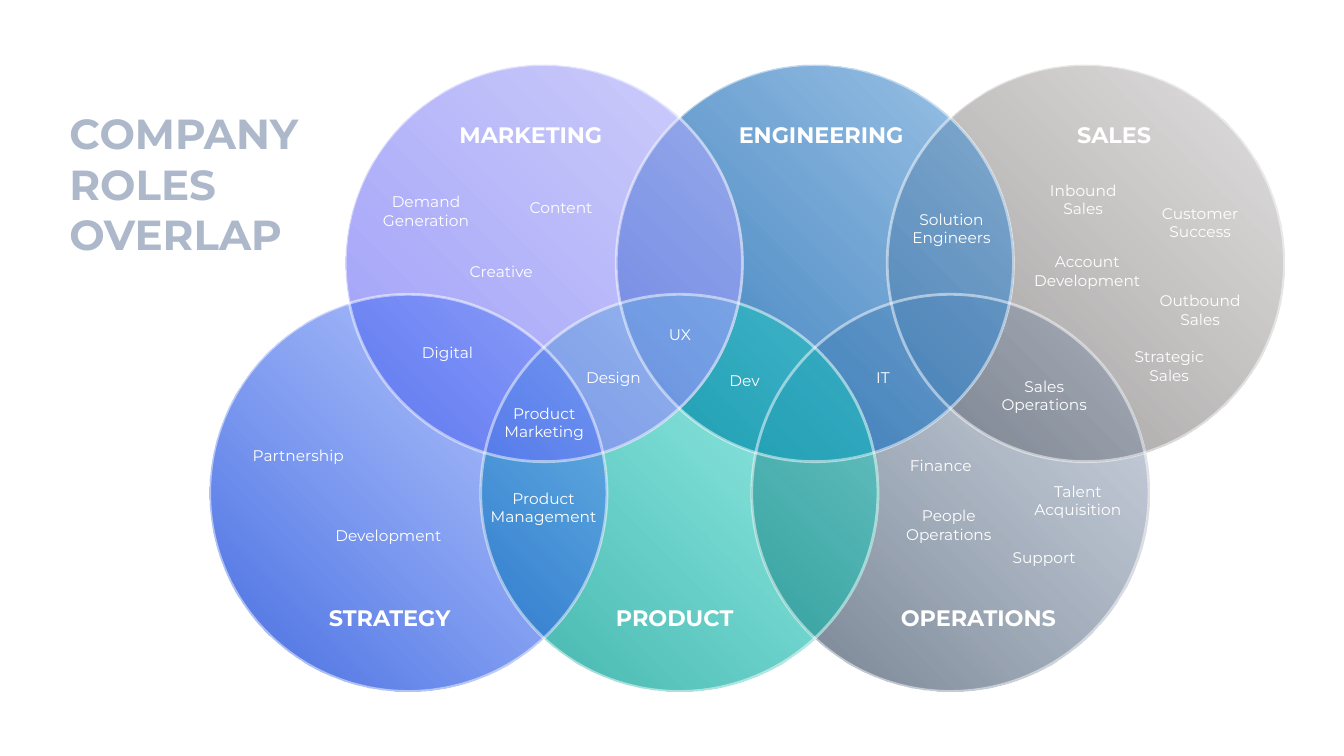
from dataclasses import dataclass
from lxml.etree import SubElement
from pptx import Presentation
from pptx.dml.color import RGBColor
from pptx.enum.shapes import MSO_SHAPE as Preset
from pptx.enum.text import MSO_ANCHOR as Anchor, MSO_AUTO_SIZE as AutoSize, PP_ALIGN as Align
from pptx.oxml import parse_xml
from pptx.oxml.ns import nsdecls, qn
from pptx.util import Inches, Pt


@dataclass(frozen=True)
class Theme:
    font: str = "Montserrat"
    white: str = "FFFFFF"
    title_color: str = "ADB9CA"
    title_size: int = 30
    heading_size: int = 16
    label_size: int = 11
    outline_width: int = 2
    outline_opacity: int = 50


THEME = Theme()
TITLE = "COMPANY ROLES OVERLAP"

# name, heading centre and width in % of slide width, (colour, opacity %) from inner to outer
DEPARTMENTS = [
    ("STRATEGY", 29.0, 10.8, ("053AD8", 75), ("567FFB", 40)),
    ("MARKETING", 39.5, 12.3, ("7A7AF7", 75), ("AFAFFA", 60)),
    ("PRODUCT", 50.2, 10.4, ("10A095", 80), ("15D5C6", 40)),
    ("ENGINEERING", 61.1, 14.0, ("2E75B6", 100), ("5B9BD5", 60)),
    ("OPERATIONS", 72.8, 13.3, ("44546A", 75), ("8497B0", 40)),
    ("SALES", 82.9, 7.1, ("767171", 75), ("AFABAB", 40)),
]

ROLES = [
    ("Demand Generation", 31.7, 24.8, 8.2),
    ("Creative", 37.3, 34.0, 8.2),
    ("Content", 41.75, 25.5, 8.2),
    ("Digital", 33.3, 44.7, 8.2),
    ("Product Marketing", 40.5, 52.8, 8.2),
    ("Design", 45.65, 48.0, 8.2),
    ("UX", 50.6, 42.3, 3.75),
    ("Dev", 55.4, 48.4, 9.45),
    ("Product Management", 40.45, 64.0, 9.45),
    ("Partnership", 22.2, 58.3, 10.8),
    ("Development", 28.9, 68.9, 10.8),
    ("IT", 65.7, 48.0, 3.3),
    ("Finance", 70.0, 59.7, 8.8),
    ("Talent Acquisition", 80.2, 63.1, 8.8),
    ("People Operations", 70.6, 66.3, 8.8),
    ("Support", 77.7, 71.9, 8.8),
    ("Solution Engineers", 70.8, 27.1, 9.45),
    ("Sales Operations", 77.7, 49.2, 9.45),
    ("Inbound Sales", 80.6, 23.3, 9.45),
    ("Customer Success", 89.3, 26.3, 9.45),
    ("Account Development", 80.9, 32.7, 9.45),
    ("Outbound Sales", 89.3, 37.9, 9.45),
    ("Strategic Sales", 87.0, 45.3, 9.45),
]

WIDTH, HEIGHT = 13.33, 7.5
DIAMETER = 3.94
FIRST_LEFT, COLUMN_STEP = 2.08, 1.344
ROW_TOPS = (2.92, 0.64)
HEADING_TOPS = (5.94, 1.15)
HEADING_HEIGHT = 0.37
LABEL_HEIGHTS = (0.29, 0.47)
TITLE_BOX = (0.59, 1.02, 2.7, 1.62)


def add_circle(slide, column):
    left = FIRST_LEFT + column * COLUMN_STEP
    box = (left, ROW_TOPS[column % 2], DIAMETER, DIAMETER)
    circle = slide.shapes.add_shape(Preset.OVAL, *map(Inches, box))
    circle.shadow.inherit = False
    return circle


def fill_radial(circle, colors):
    stops = "".join(
        f'<a:gs pos="{position}"><a:srgbClr val="{color}">'
        f'<a:alpha val="{opacity * 1000}"/></a:srgbClr></a:gs>'
        for position, (color, opacity) in zip((0, 100000), colors)
    )
    gradient = parse_xml(
        f'<a:gradFill {nsdecls("a")} rotWithShape="1"><a:gsLst>{stops}</a:gsLst>'
        '<a:path path="circle"><a:fillToRect t="100000" r="100000"/></a:path></a:gradFill>'
    )
    circle.element.spPr.find(qn("a:prstGeom")).addnext(gradient)
    circle.line.fill.background()


def outline(circle):
    circle.fill.background()
    circle.line.color.rgb = RGBColor.from_string(THEME.white)
    circle.line.width = Pt(THEME.outline_width)
    color = next(circle.element.spPr.iter(qn("a:srgbClr")))
    SubElement(color, qn("a:alpha")).set("val", str(THEME.outline_opacity * 1000))


def add_text(slide, text, box, size, color=THEME.white, bold=False,
             align=Align.CENTER, anchor=Anchor.TOP, wrap=True):
    frame = slide.shapes.add_textbox(*map(Inches, box)).text_frame
    frame.word_wrap = wrap
    frame.auto_size = AutoSize.SHAPE_TO_FIT_TEXT
    frame.vertical_anchor = anchor
    paragraph = frame.paragraphs[0]
    paragraph.alignment = align
    run = paragraph.add_run()
    run.text = text
    run.font.name = THEME.font
    run.font.size = Pt(size)
    run.font.bold = bold
    run.font.color.rgb = RGBColor.from_string(color)


def centred_span(center, width):
    return (center - width / 2) * WIDTH / 100, width * WIDTH / 100


def main():
    presentation = Presentation()
    presentation.slide_width, presentation.slide_height = Inches(WIDTH), Inches(HEIGHT)
    slide = presentation.slides.add_slide(presentation.slide_layouts[6])

    columns = range(len(DEPARTMENTS))
    for column in reversed(columns):
        fill_radial(add_circle(slide, column), DEPARTMENTS[column][3:])
    for column in reversed(columns):
        outline(add_circle(slide, column))

    for column, (name, center, share, *_) in enumerate(DEPARTMENTS):
        left, width = centred_span(center, share)
        add_text(slide, name, (left, HEADING_TOPS[column % 2], width, HEADING_HEIGHT),
                 THEME.heading_size, bold=True, anchor=Anchor.MIDDLE, wrap=False)

    for role, center, top, share in ROLES:
        left, width = centred_span(center, share)
        height = LABEL_HEIGHTS[role.count(" ")]
        add_text(slide, role, (left, top * HEIGHT / 100, width, height), THEME.label_size)

    add_text(slide, TITLE, TITLE_BOX, THEME.title_size, THEME.title_color,
             bold=True, align=Align.LEFT)
    presentation.save("out.pptx")


if __name__ == "__main__":
    main()
